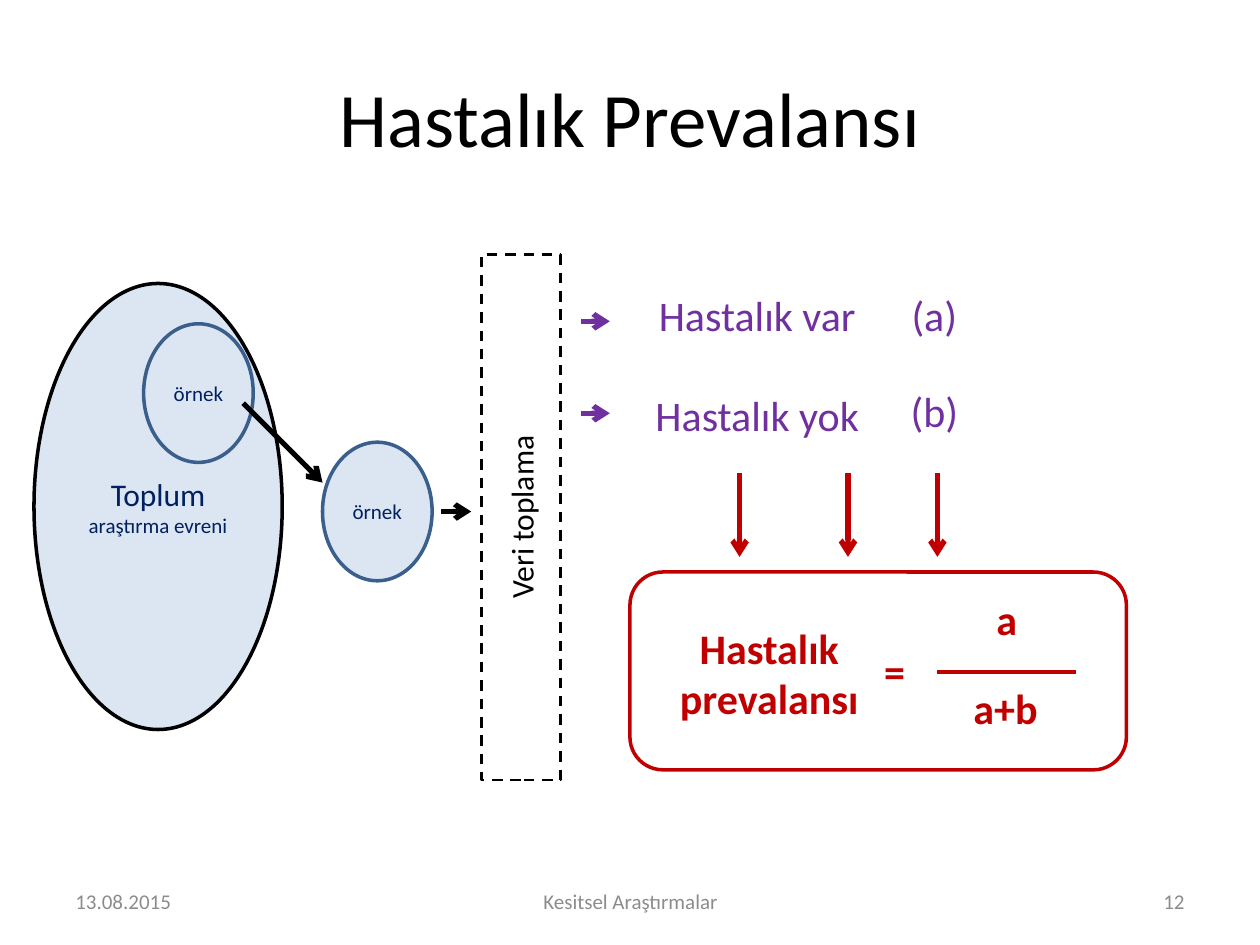
from lxml import etree
from pptx import Presentation
from pptx.dml.color import RGBColor
from pptx.enum.dml import MSO_LINE
from pptx.enum.shapes import MSO_CONNECTOR, MSO_SHAPE
from pptx.enum.text import MSO_ANCHOR, PP_ALIGN
from pptx.oxml.ns import qn
from pptx.util import Inches, Pt

LEFT, CENTER, RIGHT = PP_ALIGN.LEFT, PP_ALIGN.CENTER, PP_ALIGN.RIGHT
TOP, MIDDLE = MSO_ANCHOR.TOP, MSO_ANCHOR.MIDDLE
OVAL, RECT, ROUND = MSO_SHAPE.OVAL, MSO_SHAPE.RECTANGLE, MSO_SHAPE.ROUNDED_RECTANGLE
STRAIGHT, DASH = MSO_CONNECTOR.STRAIGHT, MSO_LINE.DASH
COLORS = {"black": "000000", "gray": "8C8C8C", "navy": "002060", "pale": "DCE6F2",
          "blue": "3A5F8C", "purple": "7030A0", "red": "C00000"}


def write(tf, text, size=24, color="black", bold=False, align=CENTER, anchor=TOP):
    tf.word_wrap = True
    tf.vertical_anchor = anchor
    p = tf.paragraphs[0]
    p.alignment = align
    r = p.add_run()
    r.text = text
    r.font.name = "Calibri"
    r.font.size = Pt(size)
    r.font.bold = bold
    r.font.color.rgb = RGBColor.from_string(COLORS[color])


def add_line(x1, y1, x2, y2, color, width=3, arrow=True):
    line = s.shapes.add_connector(STRAIGHT, Inches(x1), Inches(y1), Inches(x2), Inches(y2))
    line.line.color.rgb = RGBColor.from_string(COLORS[color])
    line.line.width = Pt(width)
    if arrow:
        etree.SubElement(line.line._get_or_add_ln(), qn("a:tailEnd"), type="arrow")
    etree.SubElement(line.element.spPr, qn("a:effectLst"))


prs = Presentation()
prs.slide_width, prs.slide_height = Inches(10), Inches(7.5)
s = prs.slides.add_slide(prs.slide_layouts[5])

title = s.shapes.title
title.left, title.top, title.width, title.height = Inches(0.5), Inches(0.3), Inches(9), Inches(1.25)
write(title.text_frame, "Hastalık Prevalansı", size=44, anchor=MIDDLE)

for text, x, w, align in [("13.08.2015", 0.5, 2.33, LEFT),
                          ("Kesitsel Araştırmalar", 3.42, 3.17, CENTER),
                          ("12", 7.17, 2.33, RIGHT)]:
    tb = s.shapes.add_textbox(Inches(x), Inches(6.95), Inches(w), Inches(0.4))
    write(tb.text_frame, text, size=12, color="gray", align=align, anchor=MIDDLE)

for kind, x, y, w, h, fill, outline, width, runs in [
    (OVAL, 0.27, 2.25, 1.97, 3.54, "pale", "black", 2,
     [("Toplum ", 18, "navy"), ("araştırma evreni", 12, "navy")]),
    (OVAL, 1.14, 2.57, 0.87, 1.1, "pale", "blue", 2, [("örnek", 12, "navy")]),
    (OVAL, 2.56, 3.51, 0.87, 1.1, "pale", "blue", 2, [("örnek", 12, "navy")]),
    (RECT, 3.82, 2.02, 0.63, 4.17, None, "black", 1.5, [("Veri toplama", 18, "black")]),
    (ROUND, 5, 4.54, 3.94, 1.57, None, "red", 2, []),
]:
    sp = s.shapes.add_shape(kind, Inches(x), Inches(y), Inches(w), Inches(h))
    sp.shadow.inherit = False
    if fill:
        sp.fill.solid()
        sp.fill.fore_color.rgb = RGBColor.from_string(COLORS[fill])
    else:
        sp.fill.background()
    sp.line.color.rgb = RGBColor.from_string(COLORS[outline])
    sp.line.width = Pt(width)
    if kind == RECT:
        sp.line.dash_style = DASH
        sp.element.txBody.bodyPr.set("vert", "vert270")
    for text, size, color in runs:
        write(sp.text_frame, text, size=size, color=color, anchor=MIDDLE)

for text, x, y, w, h, color in [
    ("Hastalık var", 4.92, 2.25, 2.18, 0.51, "purple"),
    ("(a)", 7.07, 2.25, 0.69, 0.51, "purple"),
    ("Hastalık yok", 4.92, 3.04, 2.18, 0.51, "purple"),
    ("(b)", 7.07, 3.01, 0.69, 0.51, "purple"),
    ("Hastalık prevalansı", 5.08, 4.89, 2.05, 0.91, "red"),
    ("=", 6.76, 5.07, 0.68, 0.51, "red"),
    ("a", 7.52, 4.66, 0.94, 0.51, "red"),
    ("a+b", 7.52, 5.37, 0.92, 0.51, "red"),
]:
    tb = s.shapes.add_textbox(Inches(x), Inches(y), Inches(w), Inches(h))
    write(tb.text_frame, text, color=color, bold=color == "red")

add_line(1.93, 3.2, 2.56, 3.83, "black")
add_line(3.5, 4.06, 3.74, 4.06, "black")
for y in (2.55, 3.28):
    add_line(4.61, y, 4.84, y, "purple")
for x in (5.87, 6.73, 7.44):
    add_line(x, 3.75, x, 4.42, "red")
add_line(7.44, 5.33, 8.54, 5.33, "red", width=2.25, arrow=False)

prs.save("out.pptx")
